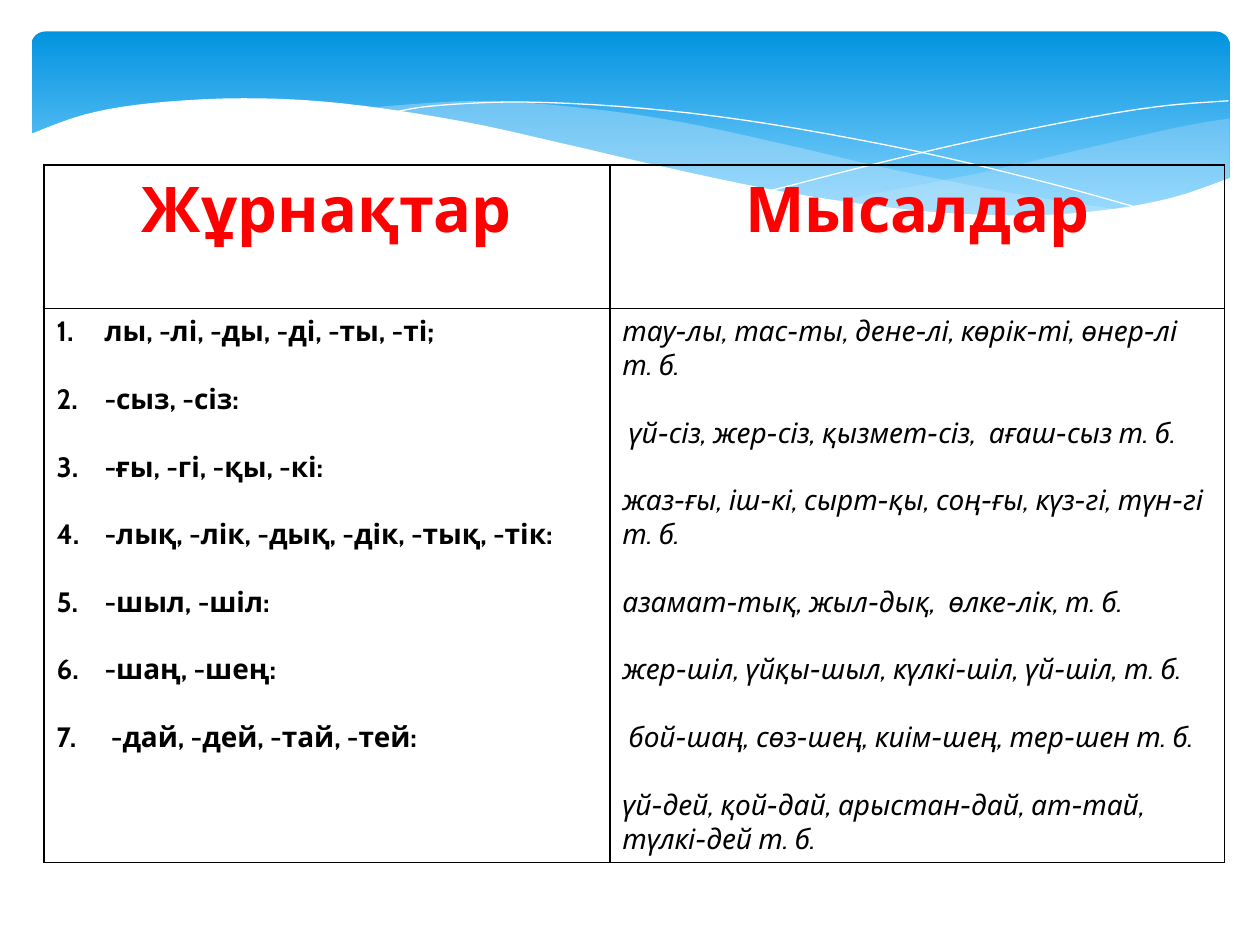
from lxml import etree
from pptx import Presentation
from pptx import util as u
from pptx.dml.color import RGBColor
from pptx.enum import shapes, text
from pptx.oxml.ns import qn

COLUMNS, ROWS = 10, 7.5
SUFFIXES = [
    "лы, -лі, -ды, -ді, -ты, -ті;",
    "-сыз, -сіз:",
    "-ғы, -гі, -қы, -кі:",
    "-лық, -лік, -дық, -дік, -тық, -тік:",
    "-шыл, -шіл:",
    "-шаң, -шең:",
    " -дай, -дей, -тай, -тей:",
]
EXAMPLES = [
    "тау-лы, тас-ты, дене-лі, көрік-ті, өнер-лі т. б.",
    " үй-сіз, жер-сіз, қызмет-сіз,  ағаш-сыз т. б.",
    "жаз-ғы, іш-кі, сырт-қы, соң-ғы, күз-гі, түн-гі т. б.",
    "азамат-тық, жыл-дық,  өлке-лік, т. б.",
    "жер-шіл, үйқы-шыл, күлкі-шіл, үй-шіл, т. б.",
    " бой-шаң, сөз-шең, киім-шең, тер-шен т. б.",
    "үй-дей, қой-дай, арыстан-дай, ат-тай, түлкі-дей т. б.",
]
RIGHT_SWELL = [
    [(9.76, 0.94), (9.35, 1.01), (8.61, 1.18), (7.79, 1.37), (6.61, 1.6)],
    [(6.61, 1.6), (7.19, 1.67), (7.81, 1.72), (8.35, 1.72), (8.81, 1.67), (9.28, 1.58), (9.76, 1.41)],
]
LONG_SWELL = [
    [(8.93, 1.67), (8.07, 1.54), (7.06, 1.34), (6.29, 1.16), (5.41, 0.97), (4.65, 0.86), (3.8, 0.8), (2.86, 0.86)],
    [(2.86, 0.86), (3.62, 0.97), (4.49, 1.16), (5.66, 1.43), (6.5, 1.58), (7.36, 1.69), (8.18, 1.73), (8.93, 1.67)],
]
FALLING_LINE = [[(3.09, 0.9), (3.44, 0.84), (4.16, 0.81), (5.1, 0.86), (6.08, 0.98), (7.27, 1.2), (8.31, 1.45), (9.07, 1.66)]]
RISING_LINE = [[(6.13, 1.51), (6.95, 1.3), (7.76, 1.11), (8.66, 0.93), (9.24, 0.84), (9.75, 0.8)]]
WHITE_WAVE = [
    [(9.77, 1.41), (9.3, 1.57), (8.75, 1.67), (8.09, 1.71), (7.26, 1.67), (6.26, 1.53), (5.29, 1.33), (4.47, 1.14),
     (3.65, 0.96), (2.71, 0.82), (1.93, 0.78), (1.19, 0.82), (0.67, 0.91), (0.23, 1.07)],
    [(0.23, 2.24), (9.77, 2.24)],
]


def colour(code):
    """Turn a hex string into a colour."""
    return RGBColor.from_string(code)


def smooth(knots, steps=5):
    """Return points of a Catmull-Rom curve through the knots."""
    padded = [knots[0], *knots, knots[-1]]
    points = [knots[0]]
    for a, b, c, d in zip(padded, padded[1:], padded[2:], padded[3:]):
        for t in (step / steps for step in range(1, steps + 1)):
            points.append(tuple(
                (2 * q + (r - p) * t + (2 * p - 5 * q + 4 * r - s) * t ** 2 + (3 * q - p - 3 * r + s) * t ** 3) / 2
                for p, q, r, s in zip(a, b, c, d)))
    return points


class Board:
    """Hold the style and the current slide."""

    font = "Cabin"
    header = {"size": u.Pt(36), "bold": True}
    suffix = {"size": u.Pt(16), "bold": True}
    example = {"size": u.Pt(16), "bold": False, "italic": True}
    gap = u.Pt(19.3)

    def __init__(self, deck):
        """Add a blank slide to the deck."""
        self.unit = deck.slide_width / COLUMNS
        self.slide = deck.slides.add_slide(deck.slide_layouts[6])

    def grid(self, *lengths):
        """Turn grid units into slide lengths."""
        return [round(length * self.unit) for length in lengths]

    def banner(self, place, top, bottom):
        """Add the rounded gradient banner."""
        banner = self.slide.shapes.add_shape(shapes.MSO_SHAPE.ROUNDED_RECTANGLE, *self.grid(*place))
        banner.adjustments[0] = 0.07
        banner.shadow.inherit = False
        banner.line.fill.background()
        banner.fill.gradient()
        banner.fill.gradient_angle = 270
        for stop, code, position in zip(banner.fill.gradient_stops, (top, bottom), (0, 0.9)):
            stop.color.rgb = colour(code)
            stop.position = position

    def wave(self, curves, fill=None, opacity=100):
        """Add a filled swell, or a thin white line when there is no fill."""
        points = [self.grid(*point) for curve in curves for point in smooth(curve)]
        builder = self.slide.shapes.build_freeform(*points[0], scale=1.0)
        builder.add_line_segments(points[1:], close=fill is not None)
        wave = builder.convert_to_shape()
        wave.shadow.inherit = False
        if fill is None:
            wave.fill.background()
            wave.line.color.rgb = colour("FFFFFF")
            wave.line.width = 0
            return
        wave.line.fill.background()
        wave.fill.solid()
        wave.fill.fore_color.rgb = colour(fill)
        if opacity < 100:
            tint = wave._element.spPr.find(qn("a:solidFill")).find(qn("a:srgbClr"))
            etree.SubElement(tint, qn("a:alpha"), val=str(opacity * 1000))

    def table(self, place, widths, heights):
        """Add a plain table with black borders."""
        frame = self.slide.shapes.add_table(len(heights), len(widths), *self.grid(*place))
        table = frame.table
        table.first_row = table.horz_banding = False
        for column, width in zip(table.columns, self.grid(*widths)):
            column.width = width
        for row, height in zip(table.rows, self.grid(*heights)):
            row.height = height
        for cell in table.iter_cells():
            cell.fill.background()
            self.border(cell)
        return table

    def border(self, cell):
        """Draw a one-point border around a cell."""
        properties = cell._tc.get_or_add_tcPr()
        for index, side in enumerate(("lnL", "lnR", "lnT", "lnB")):
            edge = etree.Element(qn("a:" + side), w=str(u.Pt(1)))
            fill = etree.SubElement(edge, qn("a:solidFill"))
            etree.SubElement(fill, qn("a:srgbClr"), val="000000")
            properties.insert(index, edge)

    def fill_cell(self, cell, lines, style, code="000000", align=None, numbered=False):
        """Put spaced paragraphs into a cell."""
        frame = cell.text_frame
        for index, line in enumerate(lines):
            paragraph = frame.add_paragraph() if index else frame.paragraphs[0]
            paragraph.alignment = align
            if index:
                paragraph.space_before = self.gap
            if numbered:
                properties = paragraph._p.get_or_add_pPr()
                properties.set("marL", str(u.Inches(0.38)))
                properties.set("indent", str(u.Inches(-0.38)))
                etree.SubElement(properties, qn("a:buAutoNum"), type="arabicPeriod")
            run = paragraph.add_run()
            run.text = line
            for name, value in {"name": self.font, **style}.items():
                setattr(run.font, name, value)
            run.font.color.rgb = colour(code)


def main():
    """Build the slide of suffixes and examples."""
    deck = Presentation()
    deck.slide_width, deck.slide_height = u.Inches(COLUMNS), u.Inches(ROWS)
    board = Board(deck)
    board.banner((0.25, 0.25, 9.51, 1.56), "0293E0", "83D3FE")
    board.wave(RIGHT_SWELL, "C6E7FC", 29)
    board.wave(LONG_SWELL, "C6E7FC", 40)
    board.wave(FALLING_LINE)
    board.wave(RISING_LINE)
    board.wave(WHITE_WAVE, "FFFFFF")
    table = board.table((0.35, 1.31, 9.37, 5.04), (4.49, 4.88), (1.14, 3.9))
    for column, heading in enumerate(("Жұрнақтар", "Мысалдар")):
        board.fill_cell(table.cell(0, column), [heading], board.header, "FF0000", text.PP_ALIGN.CENTER)
    board.fill_cell(table.cell(1, 0), SUFFIXES, board.suffix, numbered=True)
    board.fill_cell(table.cell(1, 1), EXAMPLES, board.example)
    deck.save("out.pptx")


if __name__ == "__main__":
    main()
